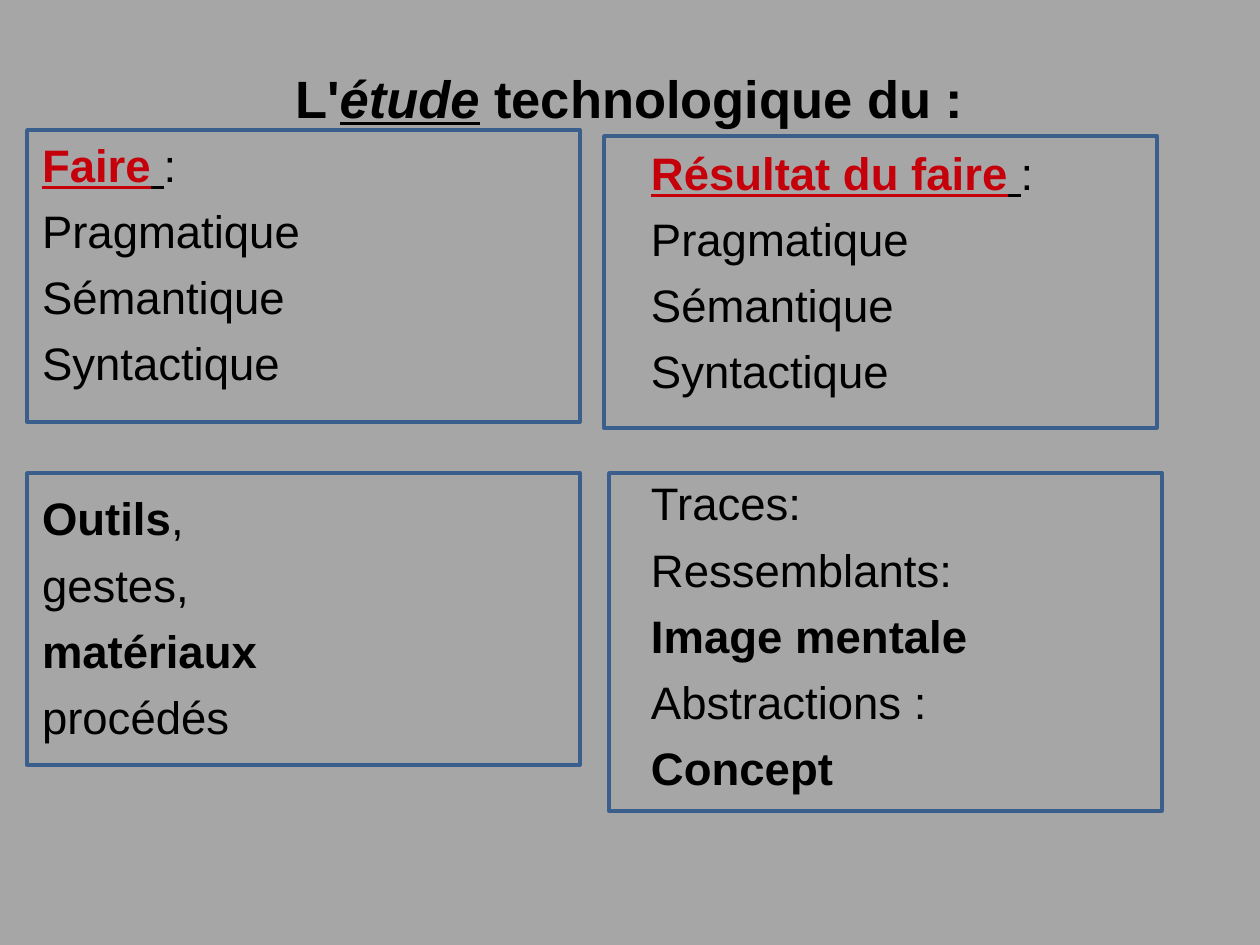
from pptx import Presentation
from pptx import util as u
from pptx.dml.color import RGBColor
from pptx.enum import shapes, text

PX = 914400 // 126
THEME = dict(
    font="Arial", title=30, body=26, line=2, space=6.6,
    back=RGBColor.from_string("A6A6A6"), ink=RGBColor.from_string("000000"),
    accent=RGBColor.from_string("C5000B"), frame=RGBColor.from_string("3A5F8C"),
)

# Content: a paragraph is a list of (text, format) runs
PLAIN, BOLD = {}, {"bold": True}
TITLE = [("L'", BOLD),
         ("étude", {"bold": True, "italic": True, "underline": True}),
         (" technologique du :", BOLD)]


def heading(label):
    return [(label, {"bold": True, "underline": True, "color": "accent"}),
            (" ", {"underline": True}), (":", PLAIN)]


LEVELS = [[(word, PLAIN)] for word in ("Pragmatique", "Sémantique", "Syntactique")]
# Columns: box in px, space before the lower group in pt, upper and lower groups
COLUMNS = [
    ((30, 132, 588, 718), 57.5, [heading("Faire")] + LEVELS,
     [[("Outils", BOLD), (",", PLAIN)], [("gestes,", PLAIN)],
      [("matériaux", BOLD)], [("procédés", PLAIN)]]),
    ((639, 140, 577, 648), 44.3, [heading("Résultat du faire")] + LEVELS,
     [[("Traces:", PLAIN)], [("Ressemblants:", PLAIN)], [("Image mentale", BOLD)],
      [("Abstractions :", PLAIN)], [("Concept", BOLD)]]),
]
FRAME_W = 553
FRAMES = [(27, 130, 292), (27, 473, 292), (604, 136, 292), (609, 473, 338)]  # x, y, height

prs = Presentation()
prs.slide_width, prs.slide_height = 1260 * PX, 945 * PX
s = prs.slides.add_slide(prs.slide_layouts[6])
s.background.fill.solid()
s.background.fill.fore_color.rgb = THEME["back"]


def add_run(p, words, size, color="ink", bold=False, italic=False, underline=False):
    r = p.add_run()
    r.text = words
    f = r.font
    f.name, f.size, f.color.rgb = THEME["font"], u.Pt(size), THEME[color]
    f.bold, f.italic, f.underline = bold, italic, underline


def add_text(paragraphs, box, size, gaps, align=text.PP_ALIGN.LEFT,
             anchor=text.MSO_ANCHOR.TOP):
    tf = s.shapes.add_textbox(*(v * PX for v in box)).text_frame
    tf.word_wrap, tf.vertical_anchor = True, anchor
    tf.margin_left = tf.margin_right = 12 * PX
    tf.margin_top = tf.margin_bottom = 5 * PX
    for i, (runs, gap) in enumerate(zip(paragraphs, gaps)):
        p = tf.paragraphs[0] if i == 0 else tf.add_paragraph()
        p.alignment, p.space_before = align, u.Pt(gap)
        for words, style in runs:
            add_run(p, words, size, **style)


# Title
add_text([TITLE], (63, 18, 1133, 158), THEME["title"], [0],
         align=text.PP_ALIGN.CENTER, anchor=text.MSO_ANCHOR.MIDDLE)

# Two columns of text
for box, gap, upper, lower in COLUMNS:
    gaps = ([0] + [THEME["space"]] * (len(upper) - 1)
            + [gap] + [THEME["space"]] * (len(lower) - 1))
    add_text(upper + lower, box, THEME["body"], gaps)

# Frames around the four groups
for x, y, h in FRAMES:
    sp = s.shapes.add_shape(shapes.MSO_SHAPE.RECTANGLE, x * PX, y * PX, FRAME_W * PX, h * PX)
    sp.shadow.inherit = False
    sp.fill.background()
    sp.line.color.rgb, sp.line.width = THEME["frame"], u.Pt(THEME["line"])

prs.save("out.pptx")
